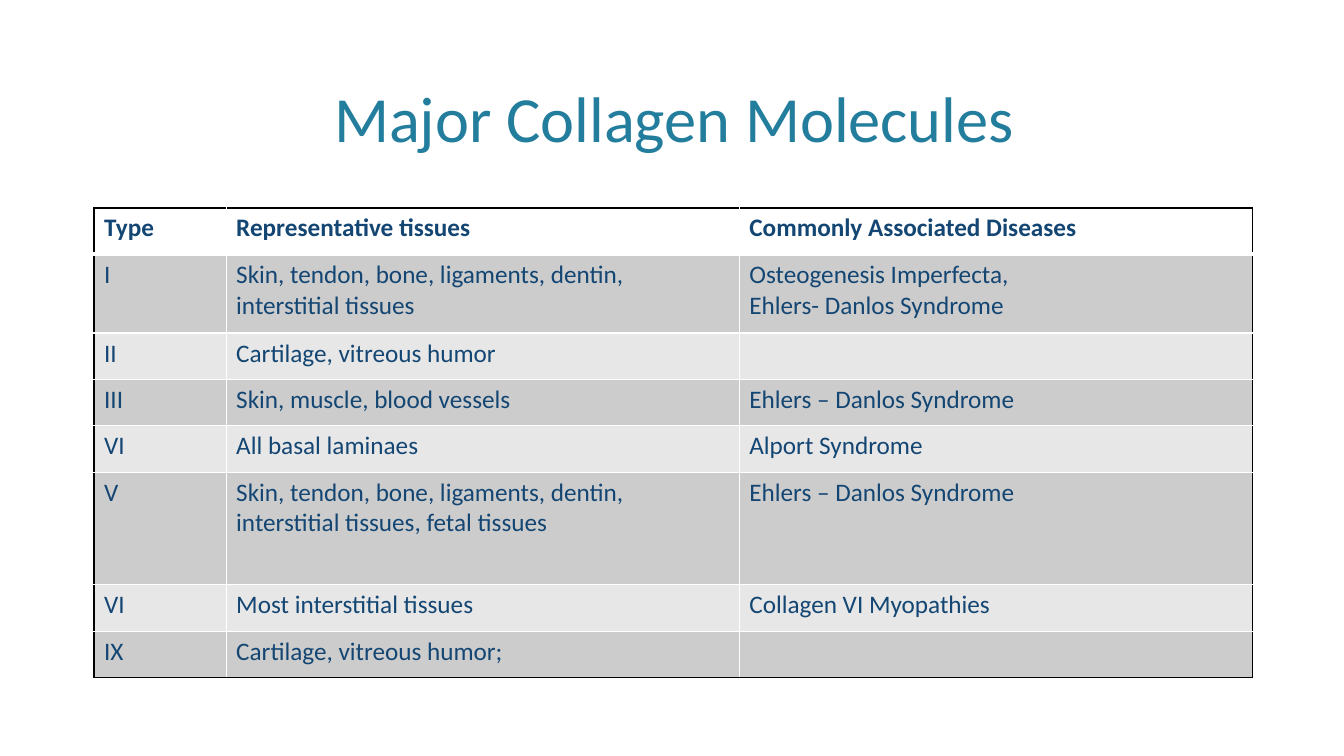
"""Build a slide with a table of the major collagen molecules."""
from dataclasses import dataclass

from lxml import etree
from pptx import Presentation
from pptx.dml.color import RGBColor
from pptx.enum.text import MSO_ANCHOR, PP_ALIGN
from pptx.oxml.ns import qn
from pptx.slide import Slide
from pptx.table import _Cell
from pptx.text.text import TextFrame
from pptx.util import Emu, Inches, Pt

CENTER, LEFT = PP_ALIGN.CENTER, PP_ALIGN.LEFT
BOTTOM = MSO_ANCHOR.BOTTOM
TEAL = RGBColor(0x23, 0x7D, 0x9C)
NAVY = RGBColor(0x14, 0x46, 0x73)
WHITE = RGBColor(0xFF, 0xFF, 0xFF)
BLACK = RGBColor(0x00, 0x00, 0x00)
DARK_BAND = RGBColor(0xCC, 0xCC, 0xCC)
LIGHT_BAND = RGBColor(0xE7, 0xE7, 0xE7)

PAGE_WIDTH, PAGE_HEIGHT = Inches(13.33), Inches(7.5)
COLUMN_WIDTHS = [Inches(width) for width in (1.31, 5.09, 5.09)]
ROW_HEIGHT = Inches(0.46)


@dataclass(frozen=True)
class Collagen:
    kind: str
    tissues: str
    diseases: str = ""
    rows: float = 1


COLLAGENS = [
    Collagen("Type", "Representative tissues", "Commonly Associated Diseases"),
    Collagen("I", "Skin, tendon, bone, ligaments, dentin, interstitial tissues",
             "Osteogenesis Imperfecta,\nEhlers- Danlos Syndrome", rows=1.7),
    Collagen("II", "Cartilage, vitreous humor"),
    Collagen("III", "Skin, muscle, blood vessels", "Ehlers – Danlos Syndrome"),
    Collagen("VI", "All basal laminaes", "Alport Syndrome"),
    Collagen("V", "Skin, tendon, bone, ligaments, dentin, interstitial tissues, fetal tissues",
             "Ehlers – Danlos Syndrome", rows=2.43),
    Collagen("VI", "Most interstitial tissues", "Collagen VI Myopathies"),
    Collagen("IX", "Cartilage, vitreous humor;"),
]


def write_text(frame: TextFrame, text: str, *, size: float, color: RGBColor,
               bold: bool = False, align: PP_ALIGN = LEFT) -> None:
    frame.word_wrap = True
    frame.text = text
    for para in frame.paragraphs:
        para.alignment = align
        para.font.size = Pt(size)
        for span in para.runs:
            span.font.name = "Calibri"
            span.font.size = Pt(size)
            span.font.bold = bold
            span.font.color.rgb = color


def set_border(cell: _Cell, position: int, side: str, color: RGBColor, points: float) -> None:
    line = etree.Element(qn(f"a:ln{side}"), w=str(Pt(points)))
    fill = etree.SubElement(line, qn("a:solidFill"))
    etree.SubElement(fill, qn("a:srgbClr"), val=str(color))
    cell._tc.get_or_add_tcPr().insert(position, line)


def draw_title(page: Slide) -> None:
    box = page.shapes.add_textbox(int(PAGE_WIDTH * 0.0615), int(PAGE_HEIGHT * 0.0173),
                                  int(PAGE_WIDTH * 0.88), int(PAGE_HEIGHT * 0.195))
    box.text_frame.vertical_anchor = BOTTOM
    write_text(box.text_frame, "Major Collagen Molecules", size=46, color=TEAL, align=CENTER)


def draw_table(page: Slide) -> None:
    heights = [Emu(int(ROW_HEIGHT * collagen.rows)) for collagen in COLLAGENS]
    last_row, last_column = len(heights) - 1, len(COLUMN_WIDTHS) - 1
    table = page.shapes.add_table(
        len(heights), len(COLUMN_WIDTHS), int(PAGE_WIDTH * 0.07), int(PAGE_HEIGHT * 0.275),
        sum(COLUMN_WIDTHS), sum(heights)).table
    for column, width in zip(table.columns, COLUMN_WIDTHS):
        column.width = width
    for row, (collagen, height) in enumerate(zip(COLLAGENS, heights)):
        table.rows[row].height = height
        band = WHITE if row == 0 else DARK_BAND if row % 2 else LIGHT_BAND
        for column, text in enumerate((collagen.kind, collagen.tissues, collagen.diseases)):
            cell = table.cell(row, column)
            write_text(cell.text_frame, text, size=18, color=NAVY, bold=row == 0)
            cell.fill.solid()
            cell.fill.fore_color.rgb = band
            outer_sides = {"L": column == 0, "R": column == last_column,
                           "T": row == 0, "B": row == last_row}
            for position, (side, outer) in enumerate(outer_sides.items()):
                under_header = (row, side) in ((0, "B"), (1, "T"))
                set_border(cell, position, side, BLACK if outer else WHITE,
                           3 if under_header else 1)


def main() -> None:
    deck = Presentation()
    deck.slide_width, deck.slide_height = PAGE_WIDTH, PAGE_HEIGHT
    page = deck.slides.add_slide(deck.slide_layouts[6])
    draw_title(page)
    draw_table(page)
    deck.save("out.pptx")


if __name__ == "__main__":
    main()
